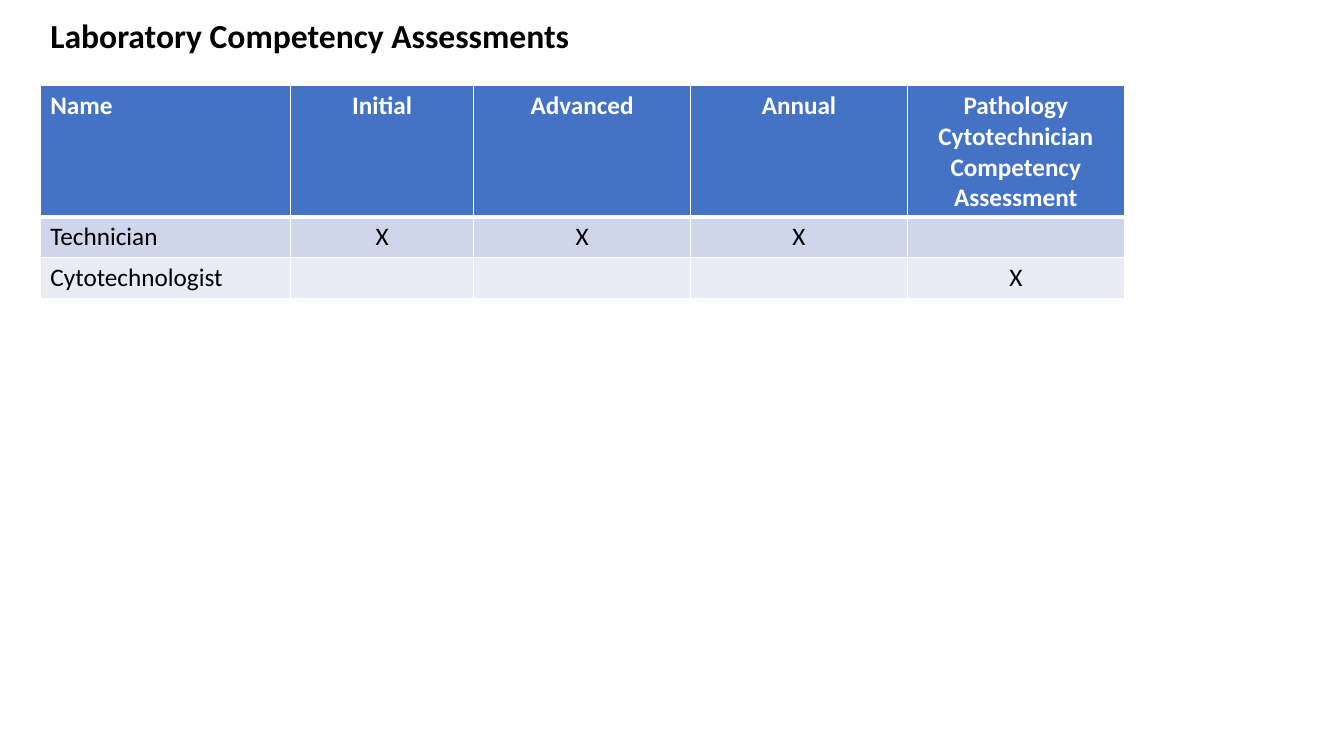
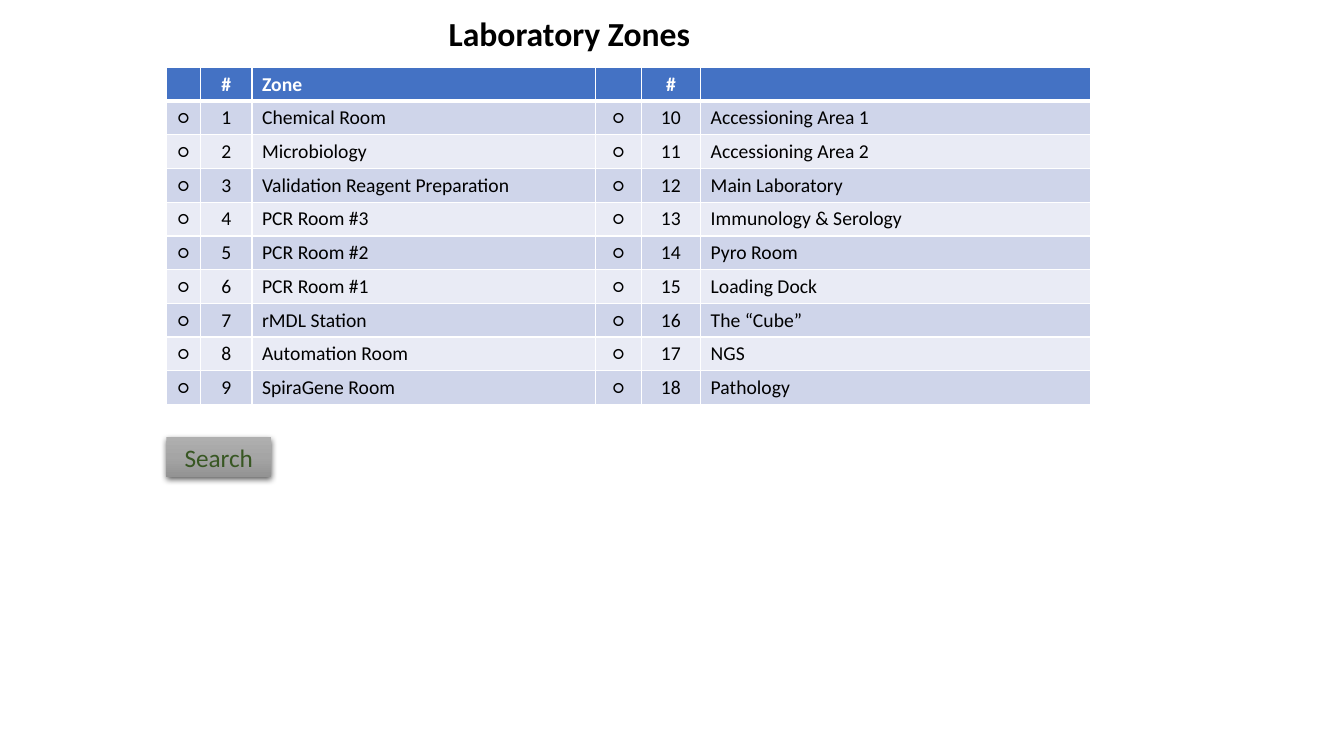
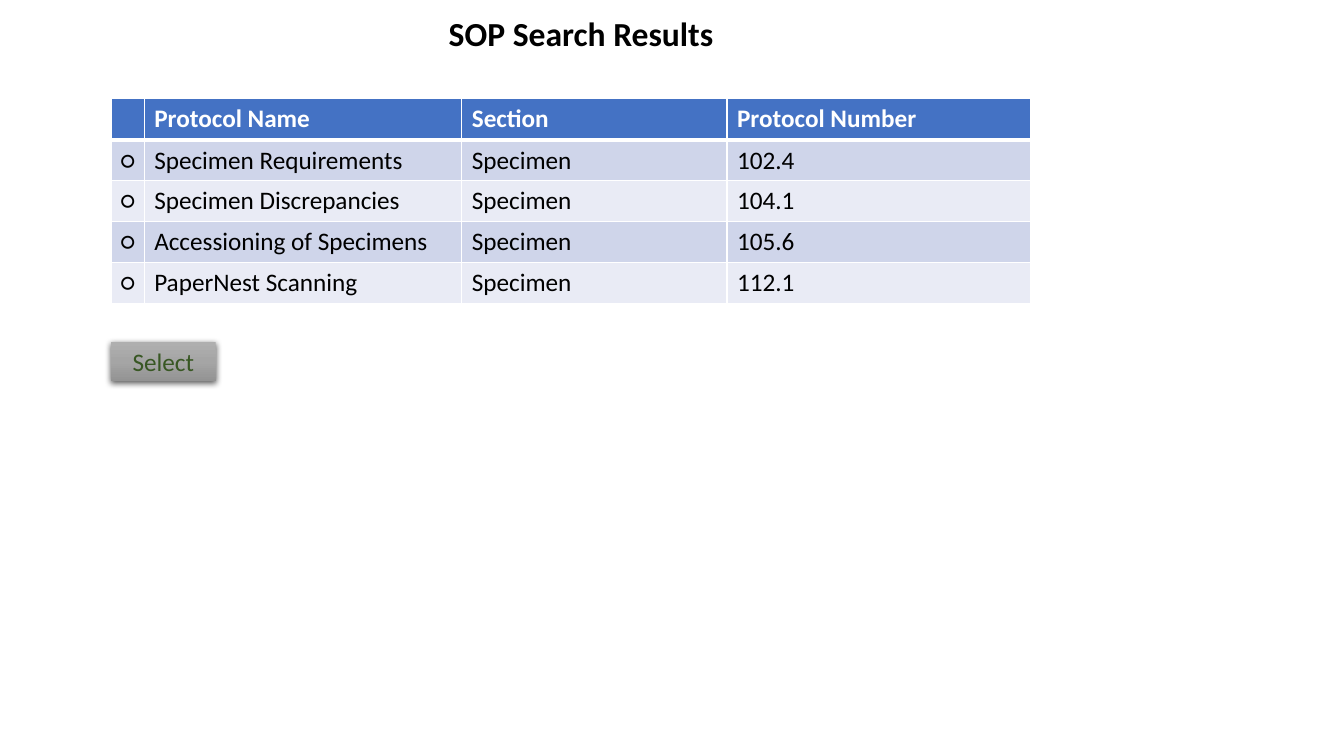
from pptx import Presentation
from pptx import util as u
from pptx.dml.color import RGBColor
from pptx.enum import shapes, text
from pptx.oxml import parse_xml
from pptx.oxml.ns import nsdecls

EMU_PER_PX = 9144
SLIDE_SIZE = (1333, 750)
FONT = "Calibri"
WHITE = RGBColor(0xFF, 0xFF, 0xFF)
BLACK = RGBColor(0x00, 0x00, 0x00)
HEADER_BLUE = RGBColor(0x44, 0x72, 0xC4)
BANDS = (RGBColor(0xCF, 0xD5, 0xEA), RGBColor(0xE9, 0xEB, 0xF5))
BUTTON_GREEN = RGBColor(0x38, 0x57, 0x23)
BUTTON_GREYS = (
    (0, RGBColor(0xAF, 0xAF, 0xAF)),
    (50, RGBColor(0xA5, 0xA5, 0xA5)),
    (100, RGBColor(0x93, 0x93, 0x93)),
)
ALIGNMENTS = {"l": text.PP_ALIGN.LEFT, "c": text.PP_ALIGN.CENTER}
CHOICE = "○"

ZONES = [
    "Chemical Room", "Microbiology", "Validation Reagent Preparation",
    "PCR Room #3", "PCR Room #2", "PCR Room #1", "rMDL Station",
    "Automation Room", "SpiraGene Room", "Accessioning Area 1",
    "Accessioning Area 2", "Main Laboratory", "Immunology & Serology",
    "Pyro Room", "Loading Dock", "The “Cube”", "NGS", "Pathology",
]
PROTOCOLS = [
    ("Specimen Requirements", "102.4"),
    ("Specimen Discrepancies", "104.1"),
    ("Accessioning of Specimens", "105.6"),
    ("PaperNest Scanning", "112.1"),
]


def px(length):
    return u.Emu(round(length * EMU_PER_PX))


def write(frame, content, size=18, color=BLACK, bold=False, align="l"):
    paragraph = frame.paragraphs[0]
    paragraph.alignment = ALIGNMENTS[align]
    if not content:
        # The end mark keeps an empty cell as low as its row.
        paragraph._p.get_or_add_endParaRPr().set("sz", str(size * 100))
        return
    run = paragraph.add_run()
    run.text = content
    run.font.name = FONT
    run.font.size = u.Pt(size)
    run.font.bold = bold
    run.font.color.rgb = color


def titled_slide(deck, heading, box):
    slide = deck.slides.add_slide(deck.slide_layouts[5])
    title = slide.shapes.title
    title.left, title.top, title.width, title.height = map(px, box)
    frame = title.text_frame
    frame.word_wrap = False
    frame.auto_size = text.MSO_AUTO_SIZE.SHAPE_TO_FIT_TEXT
    frame.vertical_anchor = text.MSO_ANCHOR.TOP
    write(frame, heading, size=24, bold=True)
    return slide


def rule_cell(cell, top=1, bottom=1):
    """Give a cell white borders, with widths in points."""
    properties = cell._tc.get_or_add_tcPr()
    for side, width in (("L", 1), ("R", 1), ("T", top), ("B", bottom)):
        properties.append(parse_xml(
            f'<a:ln{side} {nsdecls("a")} w="{u.Pt(width)}"><a:solidFill>'
            f'<a:srgbClr val="{WHITE}"/></a:solidFill></a:ln{side}>'))


def banded_table(slide, box, header_height, columns, aligns, rows, size=18):
    """Fill the box with a header row and equal body rows in two tints."""
    left, top, width, height = box
    table = slide.shapes.add_table(
        len(rows), len(columns), *map(px, box)).table
    for column, column_width in zip(table.columns, columns):
        column.width = px(column_width)
    body_height = (height - header_height) / (len(rows) - 1)
    for r, values in enumerate(rows):
        header = r == 0
        table.rows[r].height = px(header_height if header else body_height)
        for c, value in enumerate(values):
            cell = table.cell(r, c)
            rule_cell(cell, top=3 if r == 1 else 1, bottom=3 if header else 1)
            cell.fill.solid()
            cell.fill.fore_color.rgb = (
                HEADER_BLUE if header else BANDS[(r - 1) % 2])
            write(cell.text_frame, value, size=size, bold=header,
                  color=WHITE if header else BLACK, align=aligns[c])


def button(slide, label, left, top, width=104, height=39):
    shape = slide.shapes.add_shape(
        shapes.MSO_SHAPE.RECTANGLE, *map(px, (left, top, width, height)))
    shape.line.fill.background()
    shape.shadow.inherit = False
    properties = shape.element.spPr
    stops = "".join(
        f'<a:gs pos="{place * 1000}"><a:srgbClr val="{grey}"/></a:gs>'
        for place, grey in BUTTON_GREYS)
    properties.find("{*}ln").addprevious(parse_xml(
        f'<a:gradFill {nsdecls("a")} rotWithShape="1"><a:gsLst>{stops}'
        '</a:gsLst><a:lin ang="5400000" scaled="0"/></a:gradFill>'))
    properties.find("{*}effectLst").append(parse_xml(
        f'<a:outerShdw {nsdecls("a")} blurRad="{u.Pt(4.5)}" '
        f'dist="{u.Pt(1.5)}" dir="5400000" algn="ctr" rotWithShape="0">'
        f'<a:srgbClr val="{BLACK}"><a:alpha val="63000"/></a:srgbClr>'
        '</a:outerShdw>'))
    shape.text_frame.word_wrap = True
    shape.text_frame.vertical_anchor = text.MSO_ANCHOR.MIDDLE
    write(shape.text_frame, label, color=BUTTON_GREEN, align="c")


def competency_slide(deck):
    slide = titled_slide(
        deck, "Laboratory Competency Assessments", (40, 10, 540, 50))
    banded_table(
        slide, (40, 85, 1073, 211), 130, (248, 182, 215, 215, 215), "lcccc",
        [("Name", "Initial", "Advanced", "Annual",
          "Pathology Cytotechnician Competency Assessment"),
         ("Technician", "X", "X", "X", ""),
         ("Cytotechnologist", "", "", "", "X")])


def zones_slide(deck):
    slide = titled_slide(deck, "Laboratory Zones", (435, 8, 262, 50))
    half = len(ZONES) // 2
    rows = [("", "#", "Zone", "", "#", "")]
    for number, (zone, later_zone) in enumerate(
            zip(ZONES[:half], ZONES[half:]), start=1):
        rows.append((CHOICE, str(number), zone,
                     CHOICE, str(number + half), later_zone))
    banded_table(slide, (165, 67, 917, 333), 32,
                 (34, 51, 341, 45, 59, 387), "cclccl", rows, size=14)
    button(slide, "Search", 165, 434)


def results_slide(deck):
    slide = titled_slide(deck, "SOP Search Results", (435, 8, 286, 50))
    rows = [("", "Protocol Name", "Section", "Protocol Number")]
    rows += [(CHOICE, name, "Specimen", number) for name, number in PROTOCOLS]
    banded_table(slide, (110, 98, 912, 203), 41,
                 (33, 315, 263, 301), "llll", rows)
    button(slide, "Select", 110, 339)


def main():
    deck = Presentation()
    deck.slide_width, deck.slide_height = map(px, SLIDE_SIZE)
    competency_slide(deck)
    zones_slide(deck)
    results_slide(deck)
    deck.save("out.pptx")


if __name__ == "__main__":
    main()
